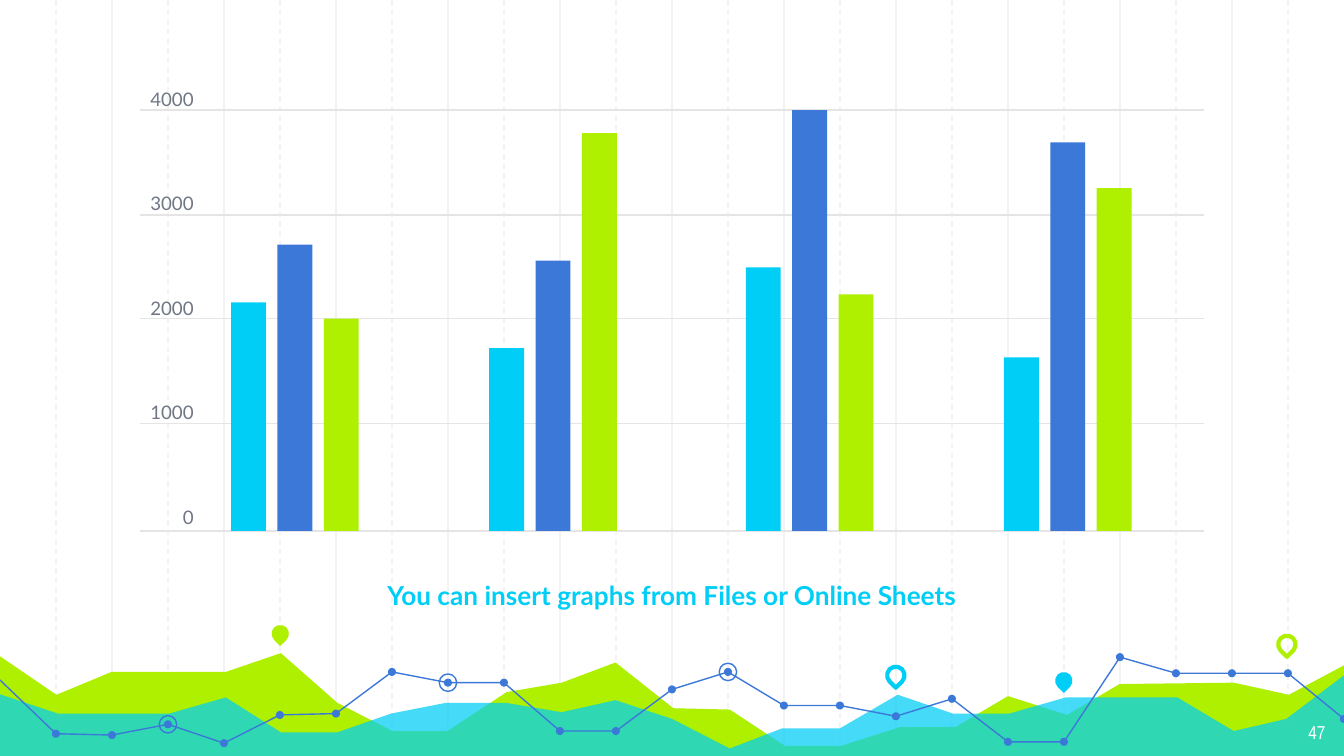
"""Build a slide with a grouped bar graph above a decorative landscape of areas and a line."""
import pptx
import pptx.dml.color
import pptx.enum.dml
import pptx.enum.shapes
import pptx.enum.text
import pptx.oxml
import pptx.oxml.ns
import pptx.util
from pptx.util import Inches

COLORS = {
    "cyan": "00CEF6", "blue": "3C78D8", "lime": "AFF000", "grid": "F3F3F3",
    "axis": "E5E5E5", "label": "707685", "white": "FFFFFF",
}
rgb = {name: pptx.dml.color.RGBColor.from_string(code) for name, code in COLORS.items()}
kinds = pptx.enum.shapes.MSO_SHAPE
alignments = pptx.enum.text.PP_ALIGN

presentation = pptx.Presentation()
presentation.slide_width = Inches(10)
presentation.slide_height = Inches(10 * 9 / 16)
slide = presentation.slides.add_slide(presentation.slide_layouts[6])
shapes = slide.shapes


def paint(shape, fill=None, line=None, width=0.75):
    """Give a shape a fill and a line, or none, and no shadow."""
    if hasattr(shape, "shadow"):
        shape.shadow.inherit = False
    else:
        shape._element.spPr.append(pptx.oxml.parse_xml(
            f'<a:effectLst {pptx.oxml.ns.nsdecls("a")}/>'))
    if fill:
        shape.fill.solid()
        shape.fill.fore_color.rgb = rgb[fill]
    elif hasattr(shape, "fill"):
        shape.fill.background()
    if line:
        shape.line.color.rgb = rgb[line]
        shape.line.width = pptx.util.Pt(width)
    else:
        shape.line.fill.background()


def draw_outline(points, close):
    """Draw a freeform through points given in inches."""
    corners = [(Inches(x), Inches(y)) for x, y in points]
    builder = shapes.build_freeform(*corners[0])
    builder.add_line_segments(corners[1:], close=close)
    return builder.convert_to_shape()


step = 10 / 24
for first, dash in ((2, None), (1, pptx.enum.dml.MSO_LINE.DASH)):
    for column in range(first, 24, 2):
        x = Inches(column * step)
        grid_line = shapes.add_connector(
            pptx.enum.shapes.MSO_CONNECTOR.STRAIGHT, x, 0, x, Inches(5.65))
        paint(grid_line, line="grid")
        if dash:
            grid_line.line.dash_style = dash

lime_area = [
    (-0.02, 4.87), (0.42, 5.17), (0.83, 5), (1.68, 5), (2.09, 4.86), (2.51, 5.23),
    (2.92, 5.44), (3.33, 5.44), (3.77, 5.15), (4.18, 5.08), (4.58, 4.93), (5.01, 5.27),
    (5.43, 5.28), (5.84, 5.55), (6.26, 5.55), (6.7, 5.41), (7.11, 5.41), (7.5, 5.18),
    (7.94, 5.32), (8.33, 5.09), (9.18, 5.08), (9.59, 5.17), (10.02, 4.94),
    (10.01, 5.64), (-0.03, 5.64),
]
cyan_area = [
    (-0.02, 5.16), (0.43, 5.31), (1.26, 5.31), (1.68, 5.19), (2.09, 5.45), (2.51, 5.45),
    (2.91, 5.31), (3.32, 5.23), (3.76, 5.23), (4.18, 5.3), (4.58, 5.21), (5, 5.35),
    (5.43, 5.57), (5.82, 5.42), (6.25, 5.42), (6.68, 5.17), (7.09, 5.31), (7.51, 5.31),
    (7.93, 5.19), (8.76, 5.19), (9.18, 5.44), (9.57, 5.35), (10.02, 5.01),
    (10.02, 5.65), (-0.03, 5.65),
]
paint(draw_outline(lime_area, True), "lime")
cyan_shape = draw_outline(cyan_area, True)
paint(cyan_shape, "cyan")
cyan_fill = cyan_shape._element.spPr.find(
    f'{pptx.oxml.ns.qn("a:solidFill")}/{pptx.oxml.ns.qn("a:srgbClr")}')
cyan_fill.append(pptx.oxml.parse_xml(
    f'<a:alpha {pptx.oxml.ns.nsdecls("a")} val="73000"/>'))

pins = [
    (2.02, 4.65, "lime", None), (6.6, 4.96, None, "cyan"),
    (7.85, 5, "cyan", None), (9.51, 4.73, None, "lime"),
]
for left, top, fill, line in pins:
    pin = shapes.add_shape(
        kinds.TEAR, Inches(left), Inches(top), Inches(0.13), Inches(0.13))
    pin.rotation = 135
    paint(pin, fill, line, 2.25)

line_heights = [
    5.06, 5.46, 5.47, 5.39, 5.53, 5.32, 5.31, 5, 5.08, 5.08, 5.44, 5.44, 5.13,
    5, 5.25, 5.25, 5.33, 5.2, 5.52, 5.52, 4.89, 5.01, 5.01, 5.01, 5.35,
]
line_points = [(index * step, y) for index, y in enumerate(line_heights)]
for first, last in ((0, 11), (11, 20), (20, 24)):
    paint(draw_outline(line_points[first:last + 1], False), line="blue")

dots = [(point, 0.06, "blue", None) for point in line_points[1:]]
rings = [(line_points[index], 0.13, None, "blue") for index in (3, 8, 13)]
for (x, y), size, fill, line in dots + rings:
    circle = shapes.add_shape(
        kinds.OVAL, Inches(x - size / 2), Inches(y - size / 2), Inches(size), Inches(size))
    paint(circle, fill, line)

for y in (0.82, 1.6, 2.37, 3.15, 3.95):
    axis_line = shapes.add_connector(
        pptx.enum.shapes.MSO_CONNECTOR.STRAIGHT,
        Inches(1.04), Inches(y), Inches(8.96), Inches(y))
    paint(axis_line, line="axis")

texts = [
    ((0.5, 4.21, 9, 0.57), 0.1, ["You can insert graphs from Files or Online Sheets"],
     "Lato", 14, "cyan", True, alignments.CENTER),
    ((9.36, 5.28, 0.6, 0.35), 0.1, ["47"],
     "Arial Narrow", 10, "white", False, alignments.RIGHT),
    ((1.04, 0.65, 0.4, 3.31), 0, ["4000", "3000", "2000", "1000", "0"],
     "Lato", 10, "label", False, alignments.RIGHT),
]
for box, inset, lines, font_name, size, color, bold, alignment in texts:
    frame = shapes.add_textbox(*map(Inches, box)).text_frame
    frame.word_wrap = True
    frame.margin_left = frame.margin_right = Inches(inset)
    frame.margin_top = frame.margin_bottom = Inches(inset)
    frame.text = "\n".join(lines)
    for index, paragraph in enumerate(frame.paragraphs):
        paragraph.alignment = alignment
        if index:
            paragraph.space_before = pptx.util.Pt(44)
        paragraph.font.name = font_name
        paragraph.font.size = pptx.util.Pt(size)
        paragraph.font.bold = bold
        paragraph.font.color.rgb = rgb[color]

baseline = 3.95
bar_pitch = 0.69 / 2
bar_groups = [
    (1.72, (1.7, 2.13, 1.58)), (3.64, (1.36, 2.01, 2.96)),
    (5.55, (1.96, 3.13, 1.76)), (7.47, (1.29, 2.89, 2.55)),
]
for left, heights in bar_groups:
    for index, (height, color) in enumerate(zip(heights, ("cyan", "blue", "lime"))):
        bar = shapes.add_shape(
            kinds.RECTANGLE, Inches(left + bar_pitch * index), Inches(baseline - height),
            Inches(0.26), Inches(height))
        paint(bar, color)

presentation.save("out.pptx")
